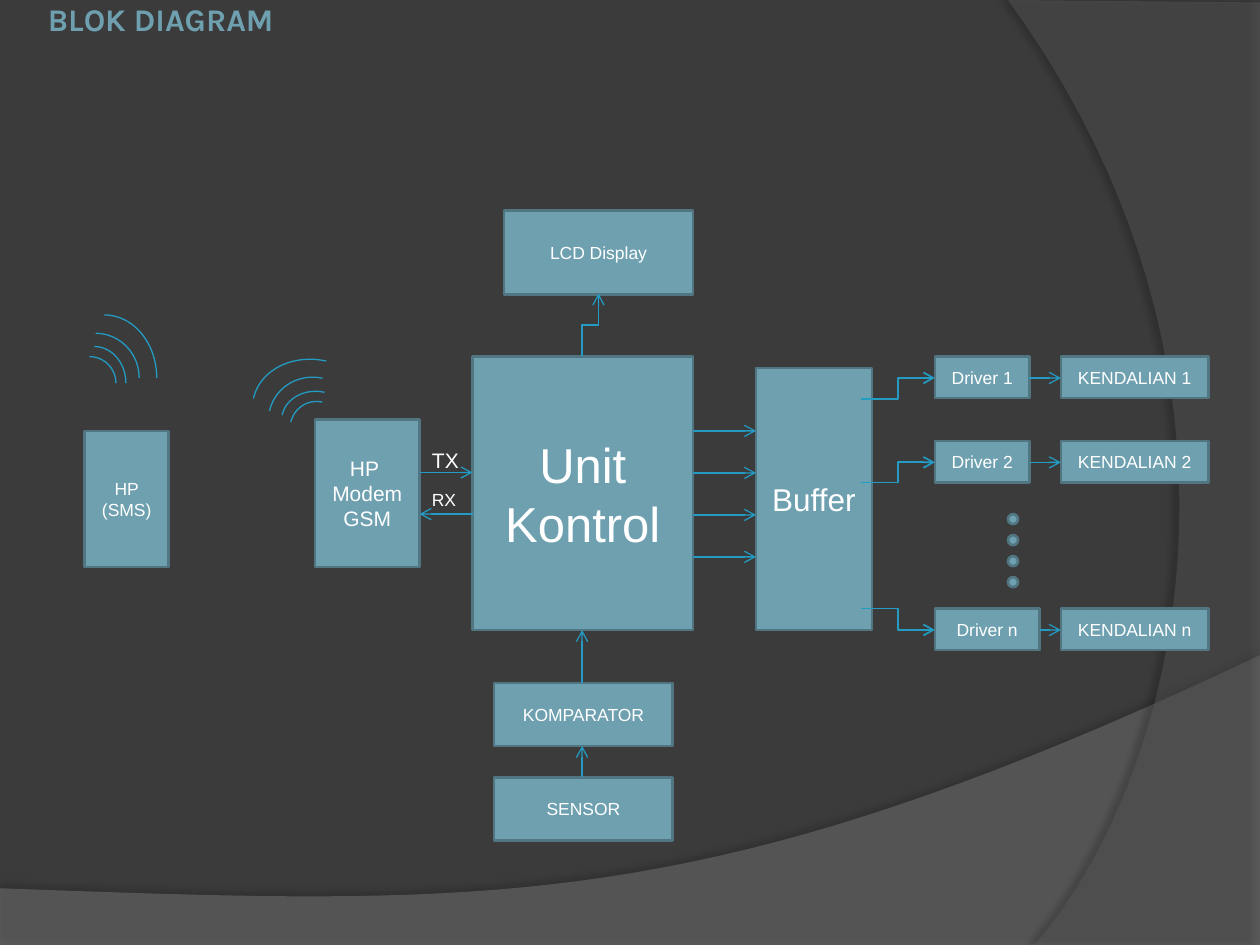
import math
from dataclasses import dataclass

from lxml import etree
from pptx import Presentation
from pptx.dml.color import RGBColor
from pptx.enum.shapes import MSO_CONNECTOR, MSO_SHAPE
from pptx.enum.text import MSO_ANCHOR, MSO_AUTO_SIZE, PP_ALIGN
from pptx.oxml.ns import qn
from pptx.util import Inches, Pt

RECT, OVAL, ARC = MSO_SHAPE.RECTANGLE, MSO_SHAPE.OVAL, MSO_SHAPE.ARC
STRAIGHT, ELBOW = MSO_CONNECTOR.STRAIGHT, MSO_CONNECTOR.ELBOW
MIDDLE, TOP = MSO_ANCHOR.MIDDLE, MSO_ANCHOR.TOP
CENTER, LEFT = PP_ALIGN.CENTER, PP_ALIGN.LEFT
FIT_SHAPE, NO_FIT = MSO_AUTO_SIZE.SHAPE_TO_FIT_TEXT, MSO_AUTO_SIZE.NONE


@dataclass(frozen=True)
class Theme:
    background: str = "3B3B3B"
    block: str = "6EA0B0"
    border: str = "517682"
    signal: str = "239BC2"
    text: str = "FFFFFF"
    wave: str = "7F7F7F"
    sweep: str = "5E5E5E"
    font: str = "Arial"
    title_font: str = "Karla"
    small: int = 10
    medium: int = 12
    large: int = 18
    huge: int = 28


THEME = Theme()


@dataclass(frozen=True)
class Block:
    text: str
    left: float
    top: float
    width: float
    height: float
    size: int = THEME.small


@dataclass(frozen=True)
class Output:
    """One driver and the load it switches."""
    name: str
    top: float
    driver_width: float
    buffer_y: float


BLOCKS = [
    Block("HP (SMS)", 0.67, 3.42, 0.67, 1.08),
    Block("HP \nModem GSM", 2.5, 3.33, 0.83, 1.17, THEME.medium),
    Block("Unit Kontrol", 3.75, 2.83, 1.75, 2.17, THEME.huge),
    Block("Buffer", 6, 2.92, 0.92, 2.08, THEME.large),
    Block("KOMPARATOR", 3.92, 5.42, 1.42, 0.5),
    Block("SENSOR", 3.92, 6.17, 1.42, 0.5),
    Block("LCD Display", 4, 1.67, 1.5, 0.67),
]
OUTPUTS = [
    Output("1", 2.83, 0.75, 3.17),
    Output("2", 3.5, 0.75, 3.83),
    Output("n", 4.83, 0.83, 4.83),
]
ARROWS = [
    (3.33, 3.75, 3.75, 3.75),
    (3.75, 4.08, 3.33, 4.08),
    (4.62, 6.17, 4.62, 5.92),
    (4.62, 5.42, 4.62, 5),
]
# Centre offset from the widest arc, then width and height
WAVES = [
    (-0.12, 0.04, 0.42, 0.42),
    (-0.08, 0.04, 0.5, 0.58),
    (-0.07, 0, 0.69, 0.71),
    (0, 0, 0.83, 1),
]


def rgb(value: str) -> RGBColor:
    return RGBColor.from_string(value)


def write_text(sp, text: str, *, size: int = THEME.small, font: str = THEME.font,
               color: str = THEME.text, bold: bool = False, align=CENTER,
               anchor=MIDDLE, wrap: bool = True, auto_size=NO_FIT) -> None:
    tf = sp.text_frame
    tf.word_wrap, tf.auto_size, tf.vertical_anchor = wrap, auto_size, anchor
    for i, line in enumerate(text.split("\n")):
        p = tf.paragraphs[0] if i == 0 else tf.add_paragraph()
        p.alignment = align
        r = p.add_run()
        r.text = line
        r.font.name, r.font.size, r.font.bold = font, Pt(size), bold
        r.font.color.rgb = rgb(color)


def add_filled(s, kind, left: float, top: float, width: float, height: float):
    sp = s.shapes.add_shape(kind, Inches(left), Inches(top), Inches(width), Inches(height))
    sp.shadow.inherit = False
    sp.fill.solid()
    sp.fill.fore_color.rgb = rgb(THEME.block)
    sp.line.color.rgb = rgb(THEME.border)
    sp.line.width = Pt(1.5)
    return sp


def add_block(s, b: Block) -> None:
    write_text(add_filled(s, RECT, b.left, b.top, b.width, b.height), b.text, size=b.size)


def add_arrow(s, x1: float, y1: float, x2: float, y2: float, *,
              kind=STRAIGHT, width: float = 0.75):
    c = s.shapes.add_connector(kind, Inches(x1), Inches(y1), Inches(x2), Inches(y2))
    c.line.color.rgb = rgb(THEME.signal)
    c.line.width = Pt(width)
    etree.SubElement(c.line._ln, qn("a:tailEnd"), type="arrow")
    etree.SubElement(c._element.spPr, qn("a:effectLst"))
    return c


def add_rising_elbow(s, x1: float, y1: float, x2: float, y2: float) -> None:
    """Elbow arrow that leaves upwards: a level elbow turned by 90 degrees."""
    cx, cy = (x1 + x2) / 2, (y1 + y2) / 2
    half_run, half_shift = (y1 - y2) / 2, (x2 - x1) / 2
    c = add_arrow(s, cx + half_run, cy + half_shift, cx - half_run, cy - half_shift, kind=ELBOW)
    c._element.spPr.find(qn("a:xfrm")).set("rot", str(90 * 60000))


def add_waves(s, cx: float, cy: float, angle: float = 0) -> None:
    """Radio waves turned as a group around the centre of the widest arc."""
    cos, sin = math.cos(math.radians(angle)), math.sin(math.radians(angle))
    for dx, dy, w, h in WAVES:
        x, y = cx + dx * cos - dy * sin, cy + dx * sin + dy * cos
        sp = s.shapes.add_shape(ARC, Inches(x - w / 2), Inches(y - h / 2), Inches(w), Inches(h))
        sp.rotation = angle
        sp.shadow.inherit = False
        sp.fill.background()
        sp.line.color.rgb = rgb(THEME.signal)
        sp.line.width = Pt(0.75)


def bezier(p0, p1, p2, p3, steps: int = 40) -> list[tuple[float, float]]:
    def point(t: float) -> tuple[float, float]:
        u = 1 - t
        weights = (u ** 3, 3 * u * u * t, 3 * u * t * t, t ** 3)
        return tuple(sum(k * v for k, v in zip(weights, axis)) for axis in zip(p0, p1, p2, p3))
    return [point(i / steps) for i in range(steps + 1)]


def add_backdrop(s, points, color: str, opacity: int, shade: int,
                 distance: float, direction: int) -> None:
    emu = [(Inches(x), Inches(y)) for x, y in points]
    builder = s.shapes.build_freeform(*emu[0])
    builder.add_line_segments(emu[1:], close=True)
    sp = builder.convert_to_shape()
    sp.fill.solid()
    sp.fill.fore_color.rgb = rgb(color)
    fill = sp._element.spPr.find(qn("a:solidFill"))
    etree.SubElement(fill[0], qn("a:alpha"), val=str(opacity * 1000))
    sp.line.fill.background()
    sp.shadow.inherit = False
    effects = sp._element.spPr.find(qn("a:effectLst"))
    shadow = etree.SubElement(effects, qn("a:outerShdw"), blurRad=str(Pt(4)),
                              dist=str(Pt(distance)), dir=str(direction * 60000))
    tint = etree.SubElement(shadow, qn("a:srgbClr"), val="000000")
    etree.SubElement(tint, qn("a:alpha"), val=str(shade * 1000))


def add_label(s, text: str, left: float, top: float, width: float, height: float, **style):
    sp = s.shapes.add_textbox(Inches(left), Inches(top), Inches(width), Inches(height))
    write_text(sp, text, align=LEFT, anchor=TOP, **style)
    return sp


def main() -> None:
    prs = Presentation()
    prs.slide_width, prs.slide_height = Inches(10), Inches(7.5)
    s = prs.slides.add_slide(prs.slide_layouts[6])
    s.background.fill.solid()
    s.background.fill.fore_color.rgb = rgb(THEME.background)

    wave = bezier((10, 5.2), (5.59, 7.29), (3.91, 7.19), (0, 7.05))
    add_backdrop(s, [(0, 7.51), (10, 7.51), *wave], THEME.wave, 45, 35, 3.5, 270)
    sweep = bezier((8.21, 7.5), (9.35, 6.19), (10.18, 3), (8, 0))
    add_backdrop(s, [(10, 0.02), (10, 7.5), *sweep], THEME.sweep, 40, 45, 4, 180)

    title = add_label(s, "BLOK DIAGRAM", 0.33, 0, 3.5, 0.58, size=THEME.large,
                      font=THEME.title_font, color=THEME.block, bold=True)
    tf = title.text_frame
    tf.margin_left = tf.margin_right = Inches(0.05)
    tf.margin_top = tf.margin_bottom = 0

    for block in BLOCKS:
        add_block(s, block)
    for out in OUTPUTS:
        y = out.top + 0.17
        add_block(s, Block(f"Driver {out.name}", 7.42, out.top, out.driver_width, 0.33))
        add_block(s, Block(f"KENDALIAN {out.name}", 8.42, out.top, 1.17, 0.33))
        add_arrow(s, 6.83, out.buffer_y, 7.42, y, kind=ELBOW, width=1)
        add_arrow(s, 7.42 + out.driver_width, y, 8.42, y)
    for i in range(4):
        bus_y = 3.42 + i / 3
        add_arrow(s, 5.5, bus_y, 6, bus_y)
        add_filled(s, OVAL, 8, 4.08 + i / 6, 0.08, 0.08)
    for ends in ARROWS:
        add_arrow(s, *ends)
    add_rising_elbow(s, 4.62, 2.83, 4.75, 2.33)

    add_waves(s, 0.83, 3)
    add_waves(s, 2.5, 3.27, 282.5)
    add_label(s, "TX", 3.33, 3.5, 0.42, 0.3, size=THEME.medium, wrap=False, auto_size=FIT_SHAPE)
    add_label(s, "RX", 3.33, 3.83, 0.4, 0.27, wrap=False, auto_size=FIT_SHAPE)
    prs.save("out.pptx")


if __name__ == "__main__":
    main()
